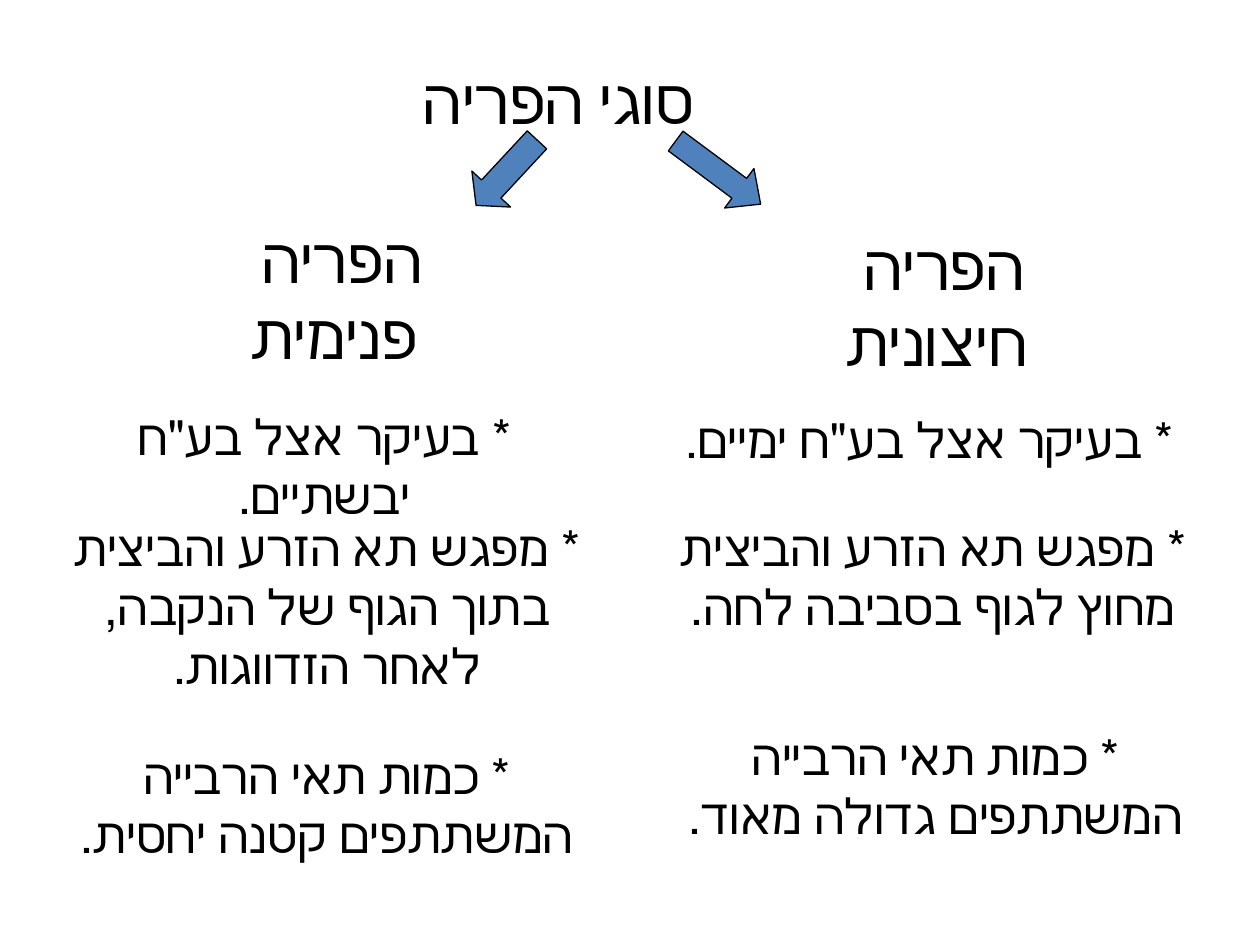
from dataclasses import dataclass

import pptx
import pptx.dml.color
import pptx.enum.shapes
import pptx.enum.text
import pptx.util

COLUMNS, ROWS = 100, 75
TITLE_ONLY_LAYOUT = 5


@dataclass(frozen=True)
class Theme:
    heading_font: str = "Comic Neue"
    point_font: str = "Courier New"
    heading_size: int = 36
    point_size: int = 28
    line_width: float = 0.75
    text: pptx.dml.color.RGBColor = pptx.dml.color.RGBColor(0, 0, 0)
    arrow: pptx.dml.color.RGBColor = pptx.dml.color.RGBColor(0x4F, 0x81, 0xBD)


@dataclass(frozen=True)
class Box:
    """A place on the grid, in columns and rows."""
    column: float
    row: float
    width: float
    height: float


@dataclass(frozen=True)
class Label:
    box: Box
    lines: tuple[str, ...]


@dataclass(frozen=True)
class Arrow:
    box: Box
    rotation: float
    head: float


THEME = Theme()

TITLE = Label(Box(14.4, 4.4, 59.8, 6), ("סוגי הפריה",))

HEADINGS = (
    Label(Box(61.4, 17.6, 25.8, 8.7), ("הפריה ", "חיצונית")),
    Label(Box(14.2, 17, 24.6, 10.2), ("הפריה ", "פנימית")),
)

POINTS = (
    Label(Box(51.1, 32, 45.3, 5.7), ("* בעיקר אצל בע\"ח ימיים.",)),
    Label(Box(51.4, 40.6, 45.3, 15.1),
          ("* מפגש תא הזרע והביצית מחוץ לגוף בסביבה לחה.",)),
    Label(Box(51.6, 57.2, 45.3, 10.3),
          ("* כמות תאי הרבייה המשתתפים גדולה מאוד.",)),
    Label(Box(3.1, 31.8, 45.3, 5.7), ("* בעיקר אצל בע\"ח יבשתיים.",)),
    Label(Box(2.5, 40.6, 46.9, 19.7),
          ("* מפגש תא הזרע והביצית בתוך הגוף של הנקבה, לאחר הזדווגות.",)),
    Label(Box(3.3, 58.7, 45.3, 10.3),
          ("* כמות תאי הרבייה המשתתפים קטנה יחסית.",)),
)

ARROWS = (
    Arrow(Box(55.05, 9.5, 3.9, 8.4), 306.6, 0.54),
    Arrow(Box(38.1, 10.15, 4.2, 7.1), 42.9, 0.42),
)


def place(box: Box, presentation) -> tuple[int, int, int, int]:
    """Turn grid units into left, top, width and height."""
    column = presentation.slide_width / COLUMNS
    row = presentation.slide_height / ROWS
    return (round(box.column * column), round(box.row * row),
            round(box.width * column), round(box.height * row))


def write_hebrew(shape, lines: tuple[str, ...], font_name: str, size: int,
                 wrap: bool) -> None:
    frame = shape.text_frame
    frame.text = "\n".join(lines)
    frame.word_wrap = wrap
    frame.auto_size = pptx.enum.text.MSO_AUTO_SIZE.NONE
    frame.vertical_anchor = pptx.enum.text.MSO_ANCHOR.TOP
    for paragraph in frame.paragraphs:
        paragraph.alignment = pptx.enum.text.PP_ALIGN.CENTER
        paragraph.font.name = font_name
        paragraph.font.size = pptx.util.Pt(size)
        paragraph.font.color.rgb = THEME.text
        paragraph._p.get_or_add_pPr().set("rtl", "1")


def add_label(slide, presentation, label: Label, font_name: str, size: int,
              wrap: bool) -> None:
    shape = slide.shapes.add_textbox(*place(label.box, presentation))
    write_hebrew(shape, label.lines, font_name, size, wrap)


def add_arrow(slide, presentation, arrow: Arrow) -> None:
    shape = slide.shapes.add_shape(
        pptx.enum.shapes.MSO_SHAPE.DOWN_ARROW, *place(arrow.box, presentation))
    shape.rotation = arrow.rotation
    shape.adjustments[1] = arrow.head
    shape.shadow.inherit = False
    shape.fill.solid()
    shape.fill.fore_color.rgb = THEME.arrow
    shape.line.color.rgb = THEME.text
    shape.line.width = pptx.util.Pt(THEME.line_width)


def main() -> None:
    presentation = pptx.Presentation()
    presentation.slide_width = pptx.util.Inches(10)
    presentation.slide_height = pptx.util.Inches(7.5)
    slide = presentation.slides.add_slide(
        presentation.slide_layouts[TITLE_ONLY_LAYOUT])

    title = slide.shapes.title
    title.left, title.top, title.width, title.height = place(
        TITLE.box, presentation)
    write_hebrew(title, TITLE.lines, THEME.heading_font, THEME.heading_size,
                 wrap=False)
    for heading in HEADINGS:
        add_label(slide, presentation, heading, THEME.heading_font,
                  THEME.heading_size, wrap=False)
    for arrow in ARROWS:
        add_arrow(slide, presentation, arrow)
    for point in POINTS:
        add_label(slide, presentation, point, THEME.point_font,
                  THEME.point_size, wrap=True)

    presentation.save("out.pptx")


if __name__ == "__main__":
    main()
